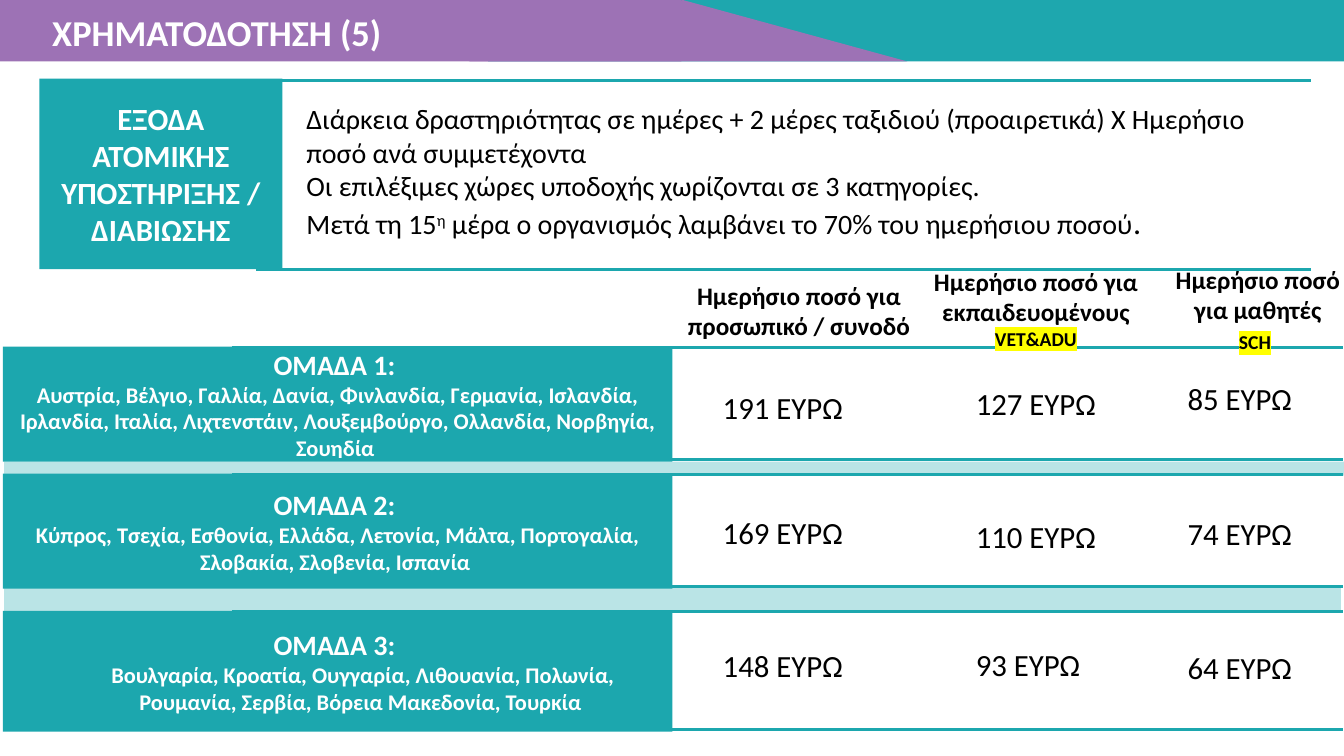
import pptx
import pptx.util
import pptx.dml.color
import pptx.enum.shapes
import pptx.enum.text
import pptx.oxml
import pptx.oxml.ns
from pptx.util import Inches

COLORS = {"teal": "1CA7AE", "banner": "1EA7AE", "purple": "9D72B5",
          "white": "FFFFFF", "black": "000000", "yellow": "FFFF00"}
FONT = "Calibri"
SHAPES = pptx.enum.shapes.MSO_SHAPE
ALIGN = pptx.enum.text.PP_ALIGN

TITLE = [[("ΧΡΗΜΑΤΟΔΟΤΗΣΗ (5)", 26)]]
EXPENSE_LABEL = [[("ΕΞΟΔΑ", 22)], [("ΑΤΟΜΙΚΗΣ ΥΠΟΣΤΗΡΙΞΗΣ / ΔΙΑΒΙΩΣΗΣ", 22)]]
RULES = [
    [("Διάρκεια δραστηριότητας σε ημέρες + 2 μέρες ταξιδιού (προαιρετικά) Χ Ημερήσιο ποσό ανά συμμετέχοντα", 20)],
    [("Οι επιλέξιμες χώρες υποδοχής χωρίζονται σε 3 κατηγορίες.", 20)],
    [("Μετά τη 15", 20), ("η", 20, "super"),
     (" μέρα ο οργανισμός λαμβάνει το 70% του ημερήσιου ποσού", 20), (".", 23)],
]
HEADERS = [
    ((6.56, 2.73, 2.73, 0.71), [[("Ημερήσιο ποσό για προσωπικό / συνοδό", 18)]]),
    ((9.01, 2.59, 2.53, 0.94), [[("Ημερήσιο ποσό για εκπαιδευομένους", 18)],
                                [("VET&ADU", 14, "mark")]]),
    ((11.45, 2.57, 2.05, 1.01), [[("Ημερήσιο ποσό για μαθητές", 18)],
                                 [("SCH", 14, "mark"), (" ", 18)]]),
]
AMOUNT_LEFTS = [7.07, 9.58, 11.68]
GROUPS = [
    {"name": "ΟΜΑΔΑ 1: ", "top": 3.44, "height": 1.14, "indent": 0,
     "countries": "Αυστρία, Βέλγιο, Γαλλία, Δανία, Φινλανδία, Γερμανία, Ισλανδία, Ιρλανδία, "
                  "Ιταλία, Λιχτενστάιν, Λουξεμβούργο, Ολλανδία, Νορβηγία, Σουηδία ",
     "amounts": [("191 ΕΥΡΩ", 3.81), ("127 ΕΥΡΩ", 3.77), ("85 ΕΥΡΩ", 3.72)]},
    {"name": "ΟΜΑΔΑ 2: ", "top": 4.7, "height": 1.14, "indent": 0,
     "countries": "Κύπρος, Τσεχία, Εσθονία, Ελλάδα, Λετονία, Μάλτα, Πορτογαλία, "
                  "Σλοβακία, Σλοβενία, Ισπανία ",
     "amounts": [("169 ΕΥΡΩ", 5.05), ("110 ΕΥΡΩ", 5.09), ("74 ΕΥΡΩ", 5.06)]},
    {"name": "ΟΜΑΔΑ 3: ", "top": 6.06, "height": 1.2, "indent": 0.5,
     "countries": "Βουλγαρία, Κροατία, Ουγγαρία, Λιθουανία, Πολωνία, Ρουμανία, Σερβία, "
                  "Βόρεια Μακεδονία, Τουρκία ",
     "amounts": [("148 ΕΥΡΩ", 6.37), ("93 ΕΥΡΩ", 6.36), ("64 ΕΥΡΩ", 6.39)]},
]
GAP_BANDS = [(0.04, 4.58, 13.29, 0.14), (0.04, 5.82, 13.26, 0.25)]

prs = pptx.Presentation()
prs.slide_width, prs.slide_height = Inches(13.33), Inches(7.5)
s = prs.slides.add_slide(prs.slide_layouts[6])


def rgb(name):
    return pptx.dml.color.RGBColor.from_string(COLORS[name])


def add_element(parent, tag, **attrs):
    el = pptx.oxml.parse_xml(f"<a:{tag} {pptx.oxml.ns.nsdecls('a')}/>")
    for key, value in attrs.items():
        el.set(key, value)
    parent.append(el)
    return el


def write(tf, paragraphs, color, bold=False, align=ALIGN.LEFT):
    for i, runs in enumerate(paragraphs):
        p = tf.paragraphs[0] if i == 0 else tf.add_paragraph()
        p.alignment = align
        for text, size, *style in runs:
            r = p.add_run()
            r.text = text
            r.font.size = pptx.util.Pt(size)
            r.font.bold = bold
            r.font.color.rgb = rgb(color)
            rPr = r._r.get_or_add_rPr()
            if "super" in style:
                rPr.set("baseline", "30000")
            if "mark" in style:
                mark = add_element(rPr, "highlight")
                add_element(mark, "srgbClr", val=COLORS["yellow"])
            r.font.name = FONT


def add_text(box, paragraphs, color="black", wrap=True, **look):
    tf = s.shapes.add_textbox(*map(Inches, box)).text_frame
    tf.word_wrap = wrap
    write(tf, paragraphs, color, **look)


def add_block(box, color, kind=SHAPES.RECTANGLE, alpha=None):
    sp = s.shapes.add_shape(kind, *map(Inches, box))
    sp.shadow.inherit = False
    sp.fill.solid()
    sp.fill.fore_color.rgb = rgb(color)
    sp.line.fill.background()
    if alpha:
        clr = sp._element.spPr.find(".//" + pptx.oxml.ns.qn("a:srgbClr"))
        add_element(clr, "alpha", val=str(alpha * 1000))
    return sp


def add_label(box, paragraphs):
    tf = add_block(box, "teal").text_frame
    tf.word_wrap = True
    tf.vertical_anchor = pptx.enum.text.MSO_ANCHOR.MIDDLE
    write(tf, paragraphs, "white", bold=True, align=ALIGN.CENTER)
    return tf


def add_rule(left, right, y):
    line = s.shapes.add_connector(pptx.enum.shapes.MSO_CONNECTOR.STRAIGHT,
                                  *map(Inches, (left, y, right, y)))
    line.line.color.rgb = rgb("teal")
    line.line.width = pptx.util.Pt(2)
    add_element(line._element.spPr, "effectLst")


add_block((4.84, 0, 8.49, 0.61), "banner")
add_block((0, 0, 6.76, 0.61), "purple")
add_block((4.65, 0, 4.35, 0.61), "purple", SHAPES.ISOSCELES_TRIANGLE).adjustments[0] = 0.488
add_text((0.42, 0.05, 3.5, 0.54), TITLE, "white", wrap=False, bold=True)

add_text((2.94, 0.96, 9.92, 1.5), RULES)
add_label((0.39, 0.78, 2.41, 1.89), EXPENSE_LABEL)
for y in (0.8, 2.67):
    add_rule(2.54, 13, y)

for band in GAP_BANDS:
    add_block(band, "teal", alpha=30)

for group in GROUPS:
    top, height = group["top"], group["height"]
    tf = add_label((0.03, top, 6.64, height),
                   [[(group["name"], 20)], [(group["countries"], 16)]])
    if group["indent"]:
        pPr = tf.paragraphs[1]._p.get_or_add_pPr()
        pPr.set("marL", str(Inches(group["indent"])))
    for y in (top + 0.01, top + height - 0.02):
        add_rule(2.3, 13.32, y)
    for left, (amount, y) in zip(AMOUNT_LEFTS, group["amounts"]):
        add_text((left, y, 1.4, 0.47), [[(amount, 22)]])

for box, paragraphs in HEADERS:
    add_text(box, paragraphs, bold=True, align=ALIGN.CENTER)

prs.save("out.pptx")
